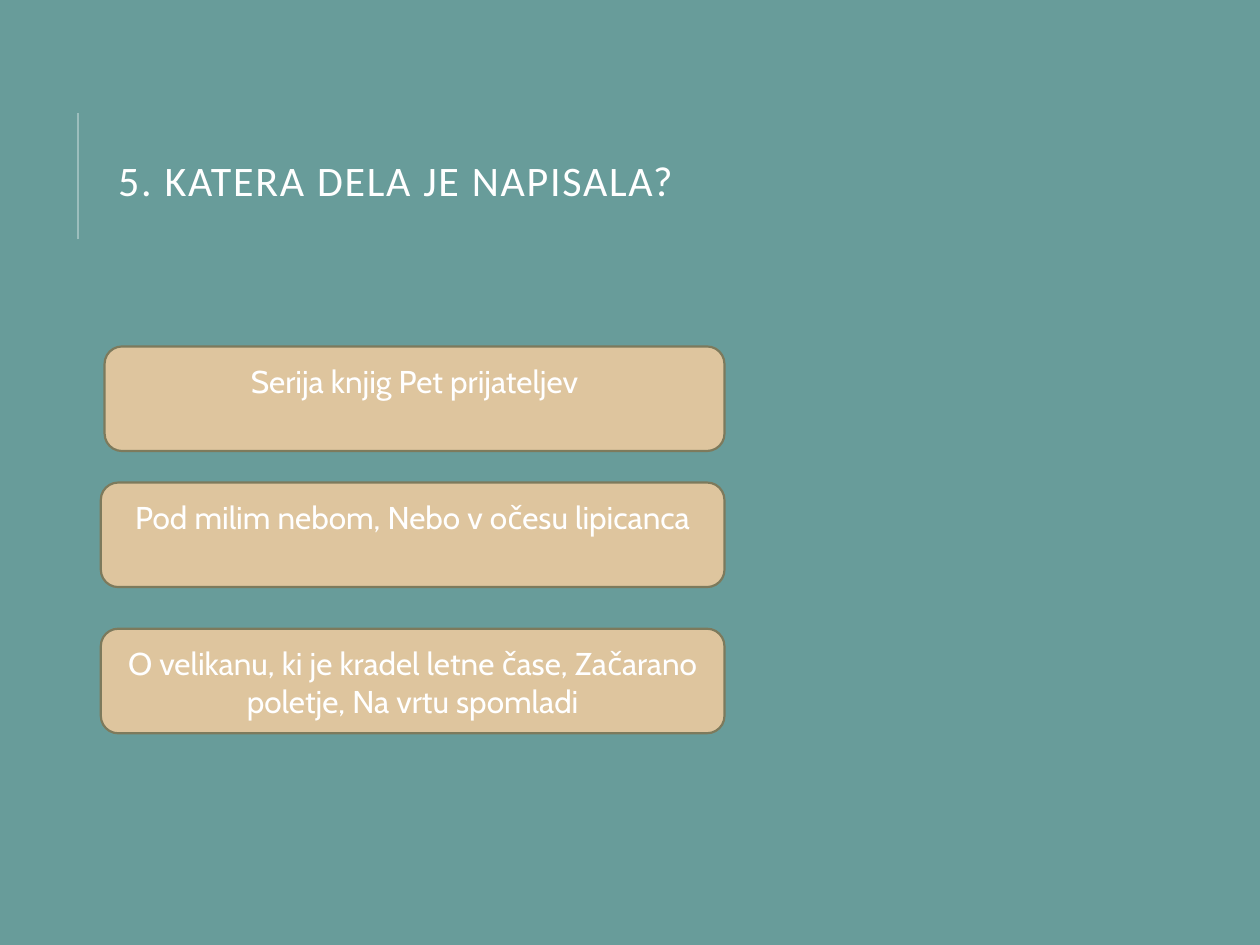
from dataclasses import dataclass

import pptx
import pptx.dml.color
import pptx.enum.shapes
import pptx.enum.text
import pptx.oxml
import pptx.oxml.ns
import pptx.util
from pptx.util import Inches

ANCHOR = pptx.enum.text.MSO_ANCHOR
ALIGN = pptx.enum.text.PP_ALIGN


def rgb(code: str) -> pptx.dml.color.RGBColor:
    return pptx.dml.color.RGBColor.from_string(code)


@dataclass(frozen=True)
class Theme:
    background: str = "689C9A"
    accent: str = "9CBEBD"
    box_fill: str = "DEC59E"
    box_line: str = "7D7A5C"
    text: str = "FFFFFF"
    title_font: str = "Calibri"
    body_font: str = "Cabin"
    title_size: float = 24
    body_size: float = 18


@dataclass(frozen=True)
class Answer:
    text: str
    left: float
    top: float


THEME = Theme()
BOX_RIGHT, BOX_HEIGHT = 5.75, 0.83
ANSWERS = [
    Answer("Serija knjig Pet prijateljev", 0.83, 2.75),
    Answer("Pod milim nebom, Nebo v očesu lipicanca", 0.8, 3.83),
    Answer("O velikanu, ki je kradel letne čase, Začarano poletje, "
           "Na vrtu spomladi", 0.8, 4.99),
]


def add_run(p, text: str, font: str, size: float):
    r = p.add_run()
    r.text = text
    r.font.name = font
    r.font.size = pptx.util.Pt(size)
    r.font.color.rgb = rgb(THEME.text)
    return r


def add_rule(s) -> None:
    line = s.shapes.add_connector(
        pptx.enum.shapes.MSO_CONNECTOR.STRAIGHT,
        Inches(0.62), Inches(1.9), Inches(0.62), Inches(0.9))
    line.line.color.rgb = rgb(THEME.accent)
    line.line.width = pptx.util.Pt(1.5)
    sp_pr = line._element.spPr
    sp_pr.append(pptx.oxml.parse_xml(
        f"<a:effectLst {pptx.oxml.ns.nsdecls('a')}/>"))


def add_title(s, text: str) -> None:
    sp = s.shapes.add_textbox(Inches(0.84), Inches(0.64),
                              Inches(7.97), Inches(1.64))
    tf = sp.text_frame
    tf.word_wrap = True
    tf.vertical_anchor = ANCHOR.MIDDLE
    p = tf.paragraphs[0]
    p.line_spacing = 0.8
    r = add_run(p, text, THEME.title_font, THEME.title_size)
    r.font._element.set("spc", "100")  # letter spacing of 1 pt


def add_answer(s, answer: Answer) -> None:
    sp = s.shapes.add_shape(
        pptx.enum.shapes.MSO_SHAPE.ROUNDED_RECTANGLE,
        Inches(answer.left), Inches(answer.top),
        Inches(BOX_RIGHT - answer.left), Inches(BOX_HEIGHT))
    sp.shadow.inherit = False
    sp.fill.solid()
    sp.fill.fore_color.rgb = rgb(THEME.box_fill)
    sp.line.color.rgb = rgb(THEME.box_line)
    sp.line.width = pptx.util.Pt(1.25)
    tf = sp.text_frame
    tf.word_wrap = True
    tf.vertical_anchor = ANCHOR.TOP
    tf.margin_top = Inches(0.08)
    tf.margin_bottom = Inches(0)
    p = tf.paragraphs[0]
    p.alignment = ALIGN.CENTER
    add_run(p, answer.text, THEME.body_font, THEME.body_size)


def main() -> None:
    prs = pptx.Presentation()
    prs.slide_width, prs.slide_height = Inches(10), Inches(7.5)
    s = prs.slides.add_slide(prs.slide_layouts[6])
    s.background.fill.solid()
    s.background.fill.fore_color.rgb = rgb(THEME.background)

    # Heading with its vertical rule
    add_rule(s)
    add_title(s, "5. KATERA DELA JE NAPISALA?")

    # Answer boxes
    for answer in ANSWERS:
        add_answer(s, answer)

    prs.save("out.pptx")


if __name__ == "__main__":
    main()
